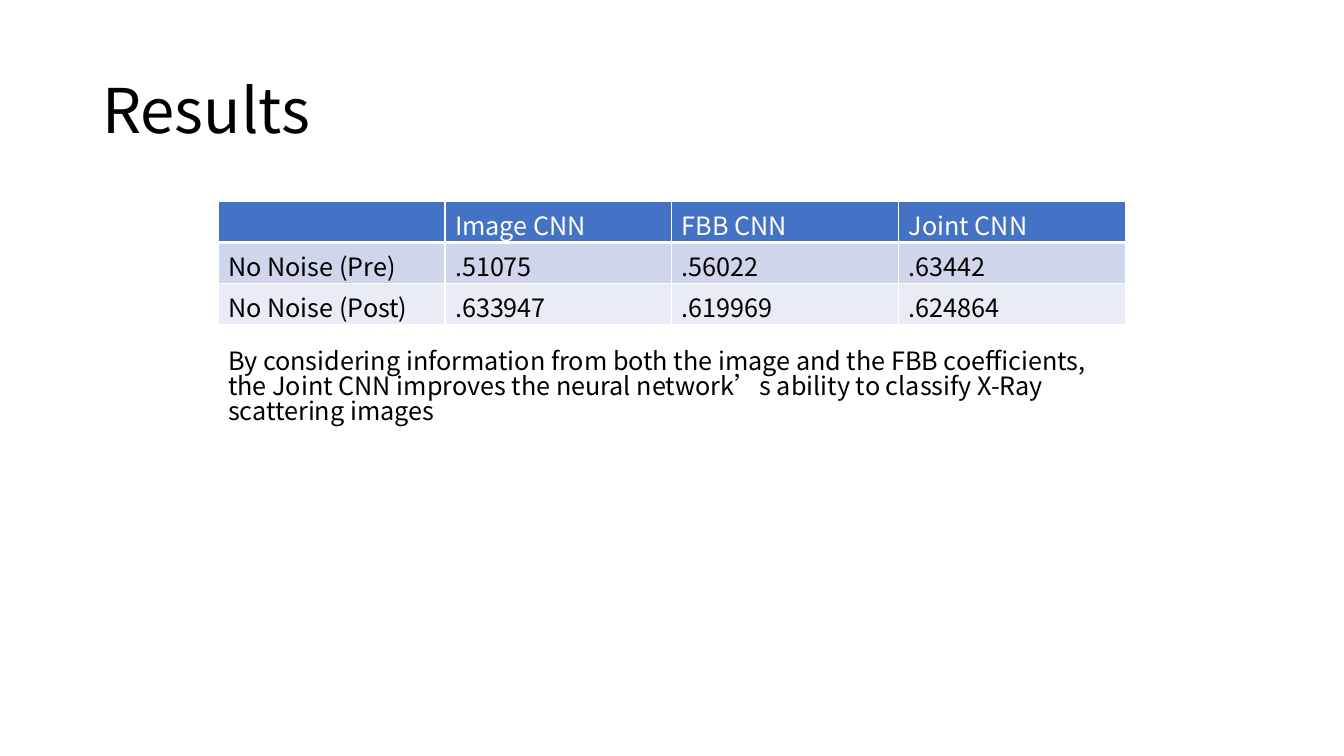
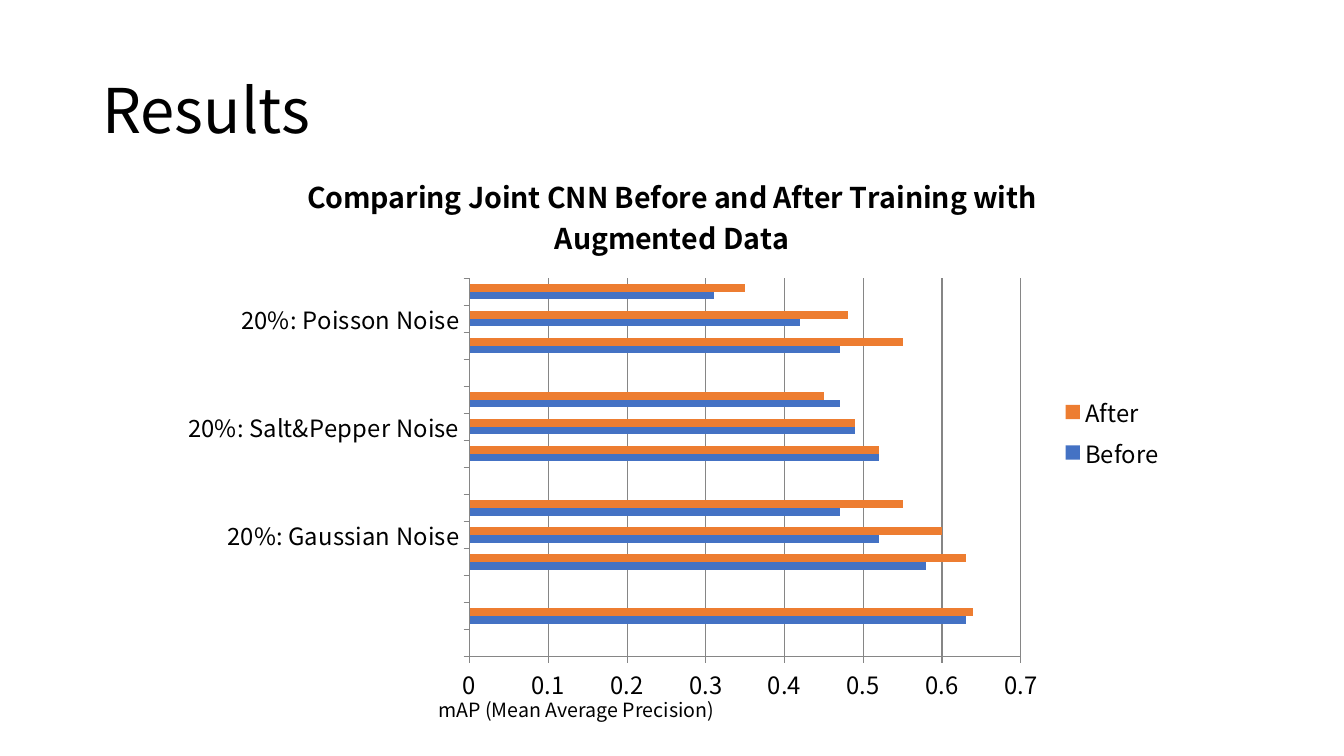
"""Builds two results slides: an accuracy table and a before/after bar chart."""
from lxml.etree import SubElement
from pptx import Presentation
from pptx.chart.data import CategoryChartData
from pptx.dml.color import RGBColor
from pptx.enum.chart import XL_CHART_TYPE, XL_LEGEND_POSITION, XL_TICK_MARK
from pptx.enum.text import MSO_ANCHOR
from pptx.oxml.ns import qn
from pptx.util import Cm, Pt

FONT = "Noto Sans CJK SC"
COLORS = {
    "text": "000000",
    "white": "FFFFFF",
    "blue": "4472C4",
    "orange": "ED7D31",
    "band_dark": "CFD5EA",
    "band_light": "E9EBF5",
    "grid": "868686",
}


def style_font(font, size, color="text", bold=False):
    font.name = FONT
    font.size = Pt(size)
    font.bold = bold
    font.color.rgb = RGBColor.from_string(COLORS[color])


def add_text(page, text, left, top, width, height, size, spacing, anchor=MSO_ANCHOR.TOP):
    box = page.shapes.add_textbox(Cm(left), Cm(top), Cm(width), Cm(height))
    frame = box.text_frame
    frame.word_wrap = True
    frame.vertical_anchor = anchor
    frame.text = text
    para = frame.paragraphs[0]
    para.line_spacing = spacing
    style_font(para.runs[0].font, size)


deck = Presentation()
deck.slide_width, deck.slide_height = Cm(33.87), Cm(19.05)
pages = [deck.slides.add_slide(deck.slide_layouts[6]) for _ in range(2)]
for page in pages:
    add_text(page, "Results", 2.33, 1.01, 29.21, 3.68, 44, 0.9, MSO_ANCHOR.MIDDLE)
table_page, chart_page = pages

rows = [
    ["", "Image CNN", "FBB CNN", "Joint CNN"],
    ["No Noise (Pre)", ".51075", ".56022", ".63442"],
    ["No Noise (Post)", ".633947", ".619969", ".624864"],
]
row_styles = [("blue", "white"), ("band_dark", "text"), ("band_light", "text")]
table = table_page.shapes.add_table(
    len(rows), len(rows[0]), Cm(5.5), Cm(5.08), Cm(22.86), Cm(3.09)
).table
for row_index, (row, (fill, color)) in enumerate(zip(rows, row_styles)):
    for column_index, text in enumerate(row):
        cell = table.cell(row_index, column_index)
        cell.text = text
        style_font(cell.text_frame.paragraphs[0].font, 18, color)
        for span in cell.text_frame.paragraphs[0].runs:
            style_font(span.font, 18, color)
        properties = cell._tc.get_or_add_tcPr()
        for side in ("lnL", "lnR", "lnT", "lnB"):
            thick = row_index == 0 and side == "lnB"
            border = SubElement(properties, qn(f"a:{side}"), w=str(Pt(3 if thick else 1)))
            paint = SubElement(border, qn("a:solidFill"))
            SubElement(paint, qn("a:srgbClr"), val=COLORS["white"])
        cell.fill.solid()
        cell.fill.fore_color.rgb = RGBColor.from_string(COLORS[fill])

add_text(
    table_page,
    "By considering information from both the image and the FBB coefficients, "
    "the Joint CNN improves the neural network’s ability to classify X-Ray scattering images",
    5.5, 8.69, 22.66, 2.57, 18, 0.84,
)

add_text(chart_page, "mAP (Mean Average Precision)", 10.8, 17.55, 8.46, 0.86, 14, 0.84)

categories = ["", "No Noise"]
for noise in ("Gaussian", "Salt&Pepper", "Poisson"):
    categories += [""] + [f"{level}%: {noise} Noise" for level in (10, 20, 30)]
series_values = {
    "Before": [None, 0.63, None, 0.58, 0.52, 0.47, None, 0.52, 0.49, 0.47, None, 0.47, 0.42, 0.31],
    "After": [None, 0.64, None, 0.63, 0.6, 0.55, None, 0.52, 0.49, 0.45, None, 0.55, 0.48, 0.35],
}
data = CategoryChartData()
data.categories = categories
for name, values in series_values.items():
    data.add_series(name, values)
chart = chart_page.shapes.add_chart(
    XL_CHART_TYPE.BAR_CLUSTERED, Cm(4.23), Cm(3.81), Cm(25.4), Cm(14.17), data
).chart
style_font(chart.font, 17)

chart.has_title = True
chart.chart_title.include_in_layout = False
title = chart.chart_title.text_frame
title.text = "Comparing Joint CNN Before and After Training with Augmented Data"
style_font(title.paragraphs[0].runs[0].font, 20.4, bold=True)

chart.has_legend = True
chart.legend.position = XL_LEGEND_POSITION.RIGHT
chart.legend.include_in_layout = False

plot = chart.plots[0]
plot.gap_width = 150
plot.vary_by_categories = False
for series, color in zip(plot.series, ("blue", "orange")):
    series.format.fill.solid()
    series.format.fill.fore_color.rgb = RGBColor.from_string(COLORS[color])

chart.value_axis.minimum_scale = 0
chart.value_axis.maximum_scale = 0.7
chart.value_axis.major_unit = 0.1
chart.value_axis.has_major_gridlines = True
for axis in (chart.category_axis, chart.value_axis):
    axis.major_tick_mark = XL_TICK_MARK.OUTSIDE
for holder in (chart.category_axis, chart.value_axis, chart.value_axis.major_gridlines):
    holder.format.line.width = Pt(0.75)
    holder.format.line.color.rgb = RGBColor.from_string(COLORS["grid"])

deck.save("out.pptx")
